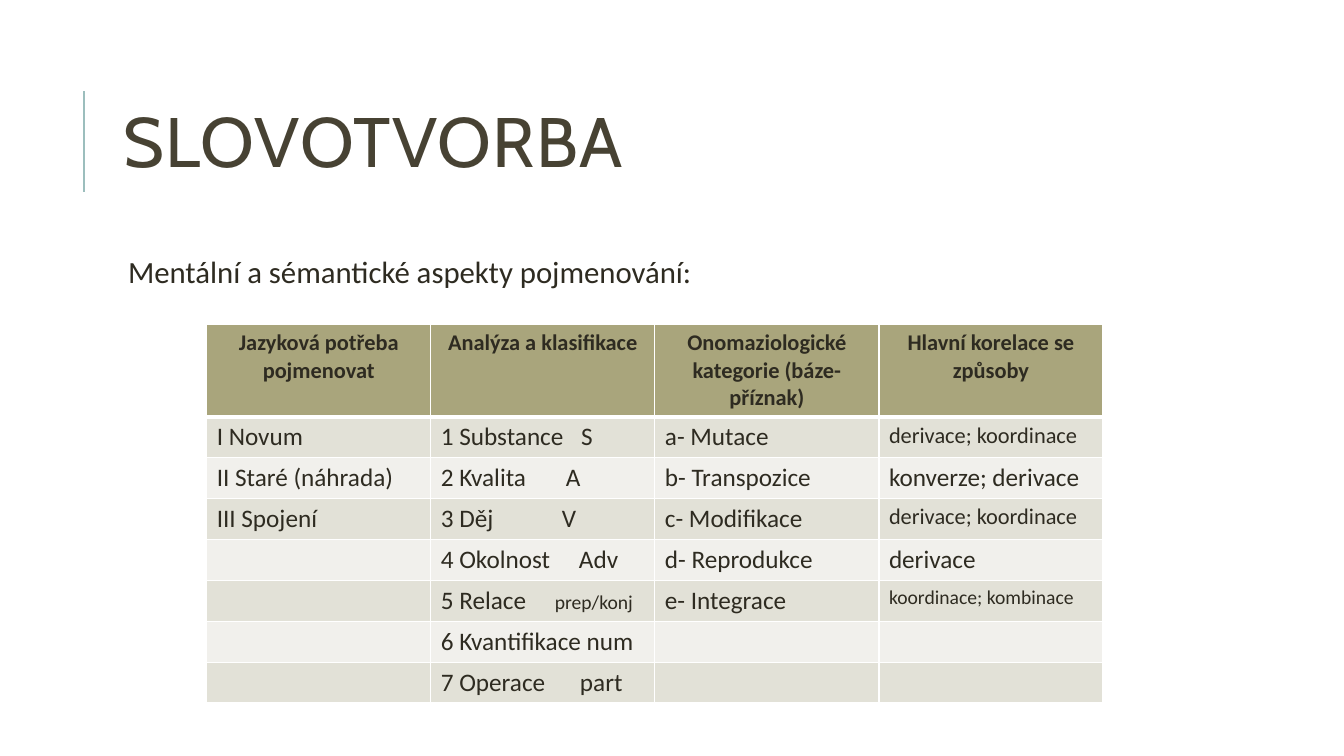
from pptx import Presentation
from pptx.dml.color import RGBColor
from pptx.enum.shapes import MSO_CONNECTOR
from pptx.enum.text import MSO_ANCHOR, MSO_AUTO_SIZE, PP_ALIGN
from pptx.oxml.ns import qn
from pptx.util import Inches, Pt
from lxml.etree import SubElement

WHITE = RGBColor(0xFF, 0xFF, 0xFF)
ACCENT = RGBColor(0x9C, 0xBE, 0xBD)
TITLE_BROWN = RGBColor(0x47, 0x42, 0x33)
TEXT_BROWN = RGBColor(0x2E, 0x2B, 0x21)
HEADER_OLIVE = RGBColor(0xA9, 0xA5, 0x7C)
BANDS = (RGBColor(0xE2, 0xE1, 0xD7), RGBColor(0xF1, 0xF0, 0xEC))

HEADINGS = (
    "Jazyková potřeba pojmenovat",
    "Analýza a klasifikace",
    "Onomaziologické kategorie (báze-příznak)",
    "Hlavní korelace se způsoby",
)
NEEDS = ("I Novum", "II Staré (náhrada)", "III Spojení")
CLASSES = (
    ("1 Substance", "S", 18, 1.39),
    ("2 Kvalita", "A", 18, 1.24),
    ("3 Děj", "V", 18, 1.2),
    ("4 Okolnost", "Adv", 18, 1.37),
    ("5 Relace", "prep/konj", 14, 1.13),
    ("6 Kvantifikace num", None, 18, None),
    ("7 Operace", "part", 18, 1.38),
)
CATEGORIES = ("a- Mutace", "b- Transpozice", "c- Modifikace",
              "d- Reprodukce", "e- Integrace")
CORRELATIONS = (
    ("derivace; koordinace", 16),
    ("konverze; derivace", 18),
    ("derivace; koordinace", 16),
    ("derivace", 18),
    ("koordinace; kombinace", 14),
)


def add_run(paragraph, text, size, font="Calibri", color=TEXT_BROWN, bold=False):
    """Append a formatted run to a paragraph and return it."""
    run = paragraph.add_run()
    run.text = text
    run.font.size = Pt(size)
    run.font.name = font
    run.font.color.rgb = color
    run.font.bold = bold
    return run


def place(placeholder, left, top, width, height, anchor):
    """Position a placeholder and return its first paragraph, left aligned."""
    placeholder.left, placeholder.top = Inches(left), Inches(top)
    placeholder.width, placeholder.height = Inches(width), Inches(height)
    frame = placeholder.text_frame
    frame.word_wrap = True
    frame.auto_size = MSO_AUTO_SIZE.NONE
    frame.vertical_anchor = anchor
    paragraph = frame.paragraphs[0]
    paragraph.alignment = PP_ALIGN.LEFT
    return paragraph


def add_accent_line(slide):
    """Draw the vertical line beside the title."""
    accent = slide.shapes.add_connector(
        MSO_CONNECTOR.STRAIGHT, Inches(0.83), Inches(1.9), Inches(0.83), Inches(0.9))
    accent.line.color.rgb = ACCENT
    accent.line.width = Pt(1.5)
    SubElement(accent._element.spPr, qn("a:effectLst"))


def fill_title(title):
    """Write the slide title."""
    heading = place(title, 1.12, 0.64, 10.63, 1.64, MSO_ANCHOR.MIDDLE)
    heading.line_spacing = 0.8
    run = add_run(heading, "SLOVOTVORBA", 50, "Cabin", TITLE_BROWN)
    run.font._element.set("spc", "100")


def fill_body(body):
    """Write the introductory list item with its blank bullet."""
    intro = place(body, 1.12, 2.5, 10.63, 4.4, MSO_ANCHOR.TOP)
    frame = body.text_frame
    frame.margin_left = frame.margin_right = Inches(0.05)
    frame.margin_top = frame.margin_bottom = Inches(0.05)
    intro.line_spacing = 0.9
    intro.space_before, intro.space_after = Pt(12), Pt(2)
    properties = intro._p.get_or_add_pPr()
    properties.set("marL", str(Inches(0.1)))
    properties.set("indent", str(-Inches(0.1)))
    bullet_color = SubElement(properties, qn("a:buClr"))
    SubElement(bullet_color, qn("a:srgbClr"), val=str(ACCENT))
    SubElement(properties, qn("a:buChar"), char=" ")
    add_run(intro, "Mentální a sémantické aspekty pojmenování:", 22)


def style_cell(cell, color, top=1, bottom=1):
    """Give a cell white borders and a solid fill."""
    properties = cell._tc.get_or_add_tcPr()
    for side, width in (("L", 1), ("R", 1), ("T", top), ("B", bottom)):
        border = SubElement(properties, qn(f"a:ln{side}"), w=str(Pt(width)))
        border_fill = SubElement(border, qn("a:solidFill"))
        SubElement(border_fill, qn("a:srgbClr"), val=str(WHITE))
    cell.fill.solid()
    cell.fill.fore_color.rgb = color


def write_column(table, column, entries):
    """Write (text, size) entries below the heading of a column."""
    for row, (text, size) in enumerate(entries, start=1):
        add_run(table.cell(row, column).text_frame.paragraphs[0], text, size)


def write_classes(table):
    """Write the classes, each with its abbreviation at a tab stop."""
    for row, (name, abbreviation, size, stop) in enumerate(CLASSES, start=1):
        entry = table.cell(row, 1).text_frame.paragraphs[0]
        add_run(entry, name, 18)
        if abbreviation:
            stops = SubElement(entry._p.get_or_add_pPr(), qn("a:tabLst"))
            SubElement(stops, qn("a:tab"), pos=str(Inches(stop)), algn="l")
            add_run(entry, "\t" + abbreviation, size)


def add_naming_table(slide):
    """Add the table of naming aspects."""
    row_count = len(CLASSES) + 1
    table = slide.shapes.add_table(
        row_count, len(HEADINGS), Inches(2.05), Inches(3.22),
        Inches(8.89), Inches(3.74)).table
    table.rows[0].height = Inches(0.9)
    for row in range(1, row_count):
        table.rows[row].height = Inches(2.84) // len(CLASSES)
    for column, heading in enumerate(HEADINGS):
        header = table.cell(0, column)
        style_cell(header, HEADER_OLIVE, bottom=3)
        label = header.text_frame.paragraphs[0]
        label.alignment = PP_ALIGN.CENTER
        add_run(label, heading, 16, bold=True)
        for row in range(1, row_count):
            style_cell(table.cell(row, column), BANDS[(row - 1) % 2],
                       top=3 if row == 1 else 1)
    write_column(table, 0, [(need, 18) for need in NEEDS])
    write_classes(table)
    write_column(table, 2, [(category, 18) for category in CATEGORIES])
    write_column(table, 3, CORRELATIONS)


def main():
    """Build and save the slide."""
    deck = Presentation()
    deck.slide_width, deck.slide_height = Inches(13.33), Inches(7.5)
    slide = deck.slides.add_slide(deck.slide_layouts[1])
    add_accent_line(slide)
    fill_title(slide.shapes.title)
    fill_body(slide.placeholders[1])
    add_naming_table(slide)
    deck.save("out.pptx")


if __name__ == "__main__":
    main()
